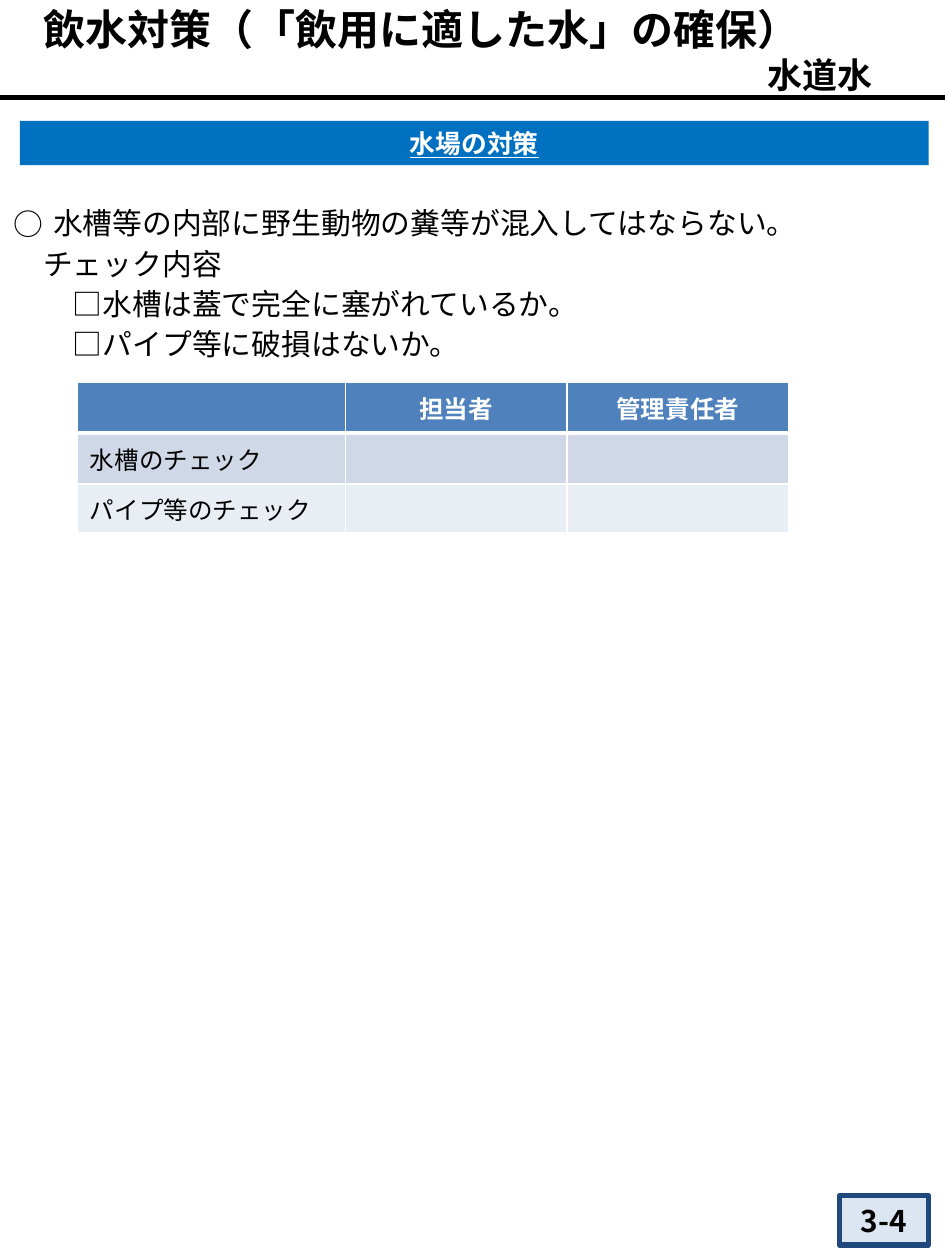
from lxml.etree import SubElement
from pptx import Presentation
from pptx.dml.color import RGBColor
from pptx.enum.shapes import MSO_CONNECTOR, MSO_SHAPE
from pptx.enum.text import MSO_ANCHOR, PP_ALIGN
from pptx.oxml.ns import qn
from pptx.util import Cm, Pt

COLORS = {
    "black": "000000", "white": "FFFFFF", "banner": "0070C0",
    "page_fill": "DCE6F2", "page_line": "1F497D",
    "header": "4F81BD", "odd_row": "D0D8E8", "even_row": "E9EDF4",
}
JAPANESE_FONT = "Noto Sans CJK JP"


def color(name):
    return RGBColor.from_string(COLORS[name])


def add_run(paragraph, text, size, color_name="black", bold=False,
            underline=False, latin=JAPANESE_FONT):
    run = paragraph.add_run()
    run.text = text
    run.font.size = Pt(size)
    run.font.bold = bold
    run.font.underline = underline
    run.font.name = latin
    run.font.color.rgb = color(color_name)
    SubElement(run.font._element, qn("a:ea"), typeface=JAPANESE_FONT)


def add_text_box(slide, box):
    frame = slide.shapes.add_textbox(*map(Cm, box)).text_frame
    frame.word_wrap = True
    return frame


def add_label(slide, box, fill, text, size, line=None, **style):
    shape = slide.shapes.add_shape(MSO_SHAPE.RECTANGLE, *map(Cm, box))
    shape.shadow.inherit = False
    shape.fill.solid()
    shape.fill.fore_color.rgb = color(fill)
    if line:
        shape.line.color.rgb = color(line)
        shape.line.width = Pt(3)
    else:
        shape.line.fill.background()
    frame = shape.text_frame
    frame.vertical_anchor = MSO_ANCHOR.MIDDLE
    frame.margin_top = frame.margin_bottom = 0
    paragraph = frame.paragraphs[0]
    paragraph.alignment = PP_ALIGN.CENTER
    add_run(paragraph, text, size, bold=True, **style)


def add_heading(slide, box):
    left, top, width, height = box
    rule_top = top + 2.06
    rule = slide.shapes.add_connector(
        MSO_CONNECTOR.STRAIGHT, Cm(0), Cm(rule_top), Cm(19.05), Cm(rule_top))
    rule.line.color.rgb = color("black")
    rule.line.width = Pt(3)
    SubElement(rule._element.spPr, qn("a:effectLst"))

    frame = add_text_box(slide, box)
    frame.vertical_anchor = MSO_ANCHOR.MIDDLE
    frame.margin_left = frame.margin_right = Cm(0.3)
    frame.margin_top = frame.margin_bottom = Cm(0.15)
    add_run(frame.paragraphs[0], "飲水対策（「飲用に適した水」の確保）", 24, bold=True)
    subtitle = frame.add_paragraph()
    subtitle.alignment = PP_ALIGN.RIGHT
    add_run(subtitle, "水道水", 20, bold=True)


def add_checklist(slide, box):
    lines = [
        ("水槽等の内部に野生動物の糞等が混入してはならない。", 0.8, "○"),
        ("チェック内容", 0.6, None),
        ("□水槽は蓋で完全に塞がれているか。", 1.2, None),
        ("□パイプ等に破損はないか。", 1.2, None),
    ]
    frame = add_text_box(slide, box)
    for index, (text, margin, bullet) in enumerate(lines):
        paragraph = frame.add_paragraph() if index else frame.paragraphs[0]
        paragraph.line_spacing = Pt(23)
        properties = paragraph._p.get_or_add_pPr()
        properties.set("marL", str(Cm(margin)))
        properties.set("indent", str(-Cm(margin) if bullet else 0))
        if bullet:
            SubElement(properties, qn("a:buFont"), typeface=JAPANESE_FONT)
            SubElement(properties, qn("a:buChar"), char=bullet)
        add_run(paragraph, text, 17)


def set_borders(cell, bottom_width):
    properties = cell._tc.get_or_add_tcPr()
    widths = {"a:lnL": 1, "a:lnR": 1, "a:lnT": 1, "a:lnB": bottom_width}
    for position, (tag, width) in enumerate(widths.items()):
        border = SubElement(properties, qn(tag), w=str(Pt(width)))
        fill = SubElement(border, qn("a:solidFill"))
        SubElement(fill, qn("a:srgbClr"), val=COLORS["white"])
        properties.insert(position, border)


def add_check_table(slide, box):
    rows = [
        ("header", ["", "担当者", "管理責任者"]),
        ("odd_row", ["水槽のチェック", "", ""]),
        ("even_row", ["パイプ等のチェック", "", ""]),
    ]
    table = slide.shapes.add_table(3, 3, *map(Cm, box)).table
    for column, width in zip(table.columns, (5.4, 4.47, 4.47)):
        column.width = Cm(width)
    for row, height in zip(table.rows, (1.03, 1.03, 0.97)):
        row.height = Cm(height)
    for row_index, (fill, texts) in enumerate(rows):
        is_header = row_index == 0
        for column_index, text in enumerate(texts):
            cell = table.cell(row_index, column_index)
            cell.fill.solid()
            cell.fill.fore_color.rgb = color(fill)
            cell.vertical_anchor = MSO_ANCHOR.MIDDLE
            set_borders(cell, 3 if is_header else 1)
            paragraph = cell.text_frame.paragraphs[0]
            if text:
                paragraph.alignment = PP_ALIGN.CENTER if is_header else PP_ALIGN.LEFT
                add_run(paragraph, text, 14, "white" if is_header else "black", is_header)
            else:
                SubElement(paragraph._p, qn("a:endParaRPr"), sz="1400")


def main():
    presentation = Presentation()
    presentation.slide_width = Cm(19.05)
    presentation.slide_height = Cm(25.4)
    slide = presentation.slides.add_slide(presentation.slide_layouts[6])
    add_label(slide, (0.4, 2.44, 18.32, 0.89), "banner", "水場の対策", 14.7,
              color_name="white", underline=True, latin="Arial")
    add_heading(slide, (0.58, -0.1, 17.32, 2.2))
    add_label(slide, (16.92, 24.1, 1.8, 1), "page_fill", "3-4", 17, line="page_line")
    add_checklist(slide, (0.02, 3.92, 19.03, 3.43))
    add_check_table(slide, (1.56, 7.7, 14.34, 3.03))
    presentation.save("out.pptx")


if __name__ == "__main__":
    main()
